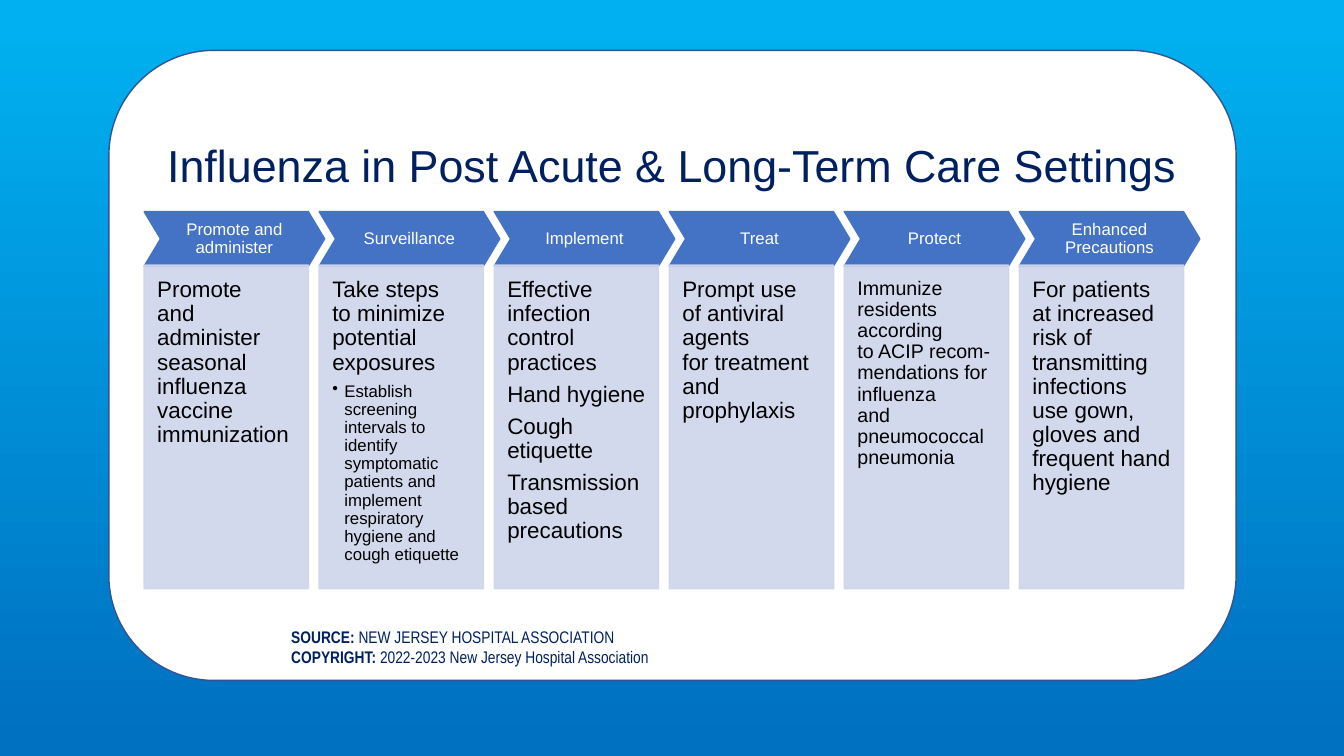
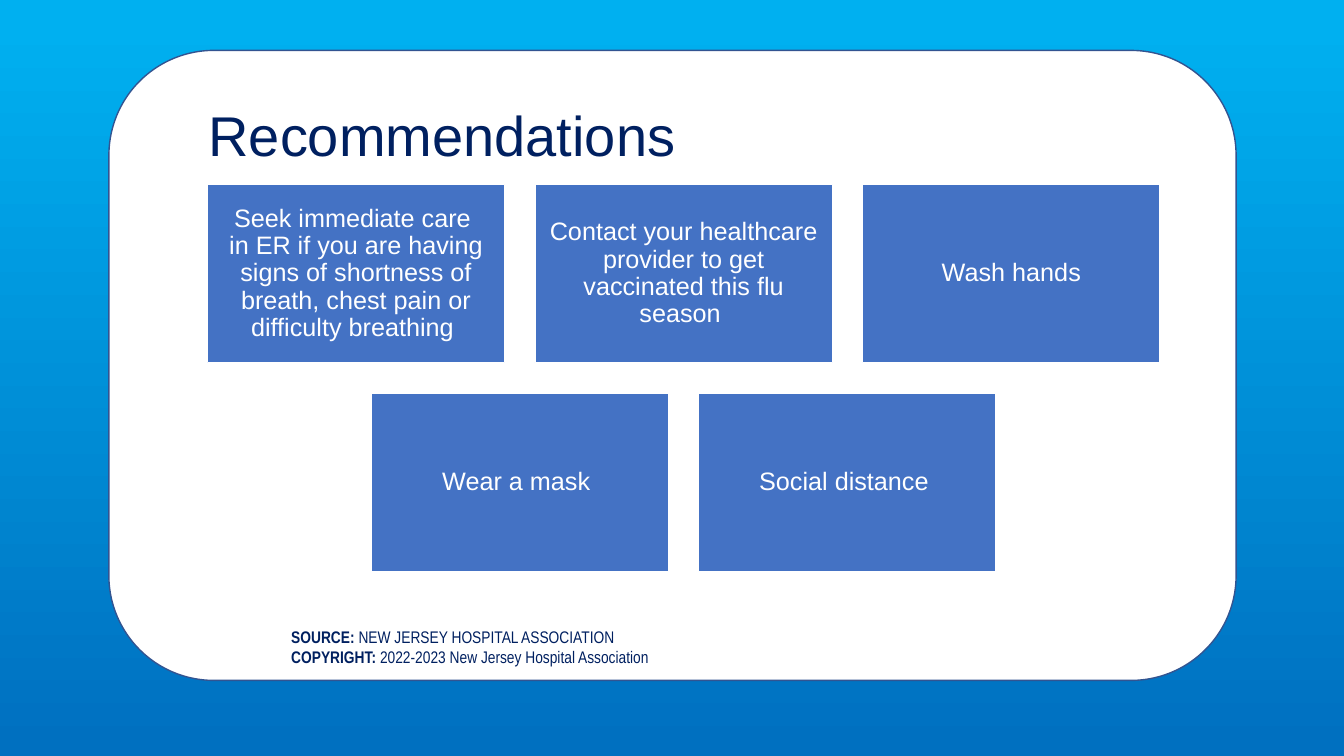
from lxml.etree import SubElement
from pptx import Presentation
from pptx.dml.color import RGBColor
from pptx.enum.shapes import MSO_SHAPE
from pptx.enum.text import MSO_ANCHOR, MSO_AUTO_SIZE, PP_ALIGN
from pptx.oxml.ns import qn
from pptx.util import Inches, Pt

RECT, ROUND, ARROW = MSO_SHAPE.RECTANGLE, MSO_SHAPE.ROUNDED_RECTANGLE, MSO_SHAPE.CHEVRON
LEFT, MID = PP_ALIGN.LEFT, PP_ALIGN.CENTER
TOP, HALF = MSO_ANCHOR.TOP, MSO_ANCHOR.MIDDLE
GROW = MSO_AUTO_SIZE.SHAPE_TO_FIT_TEXT

HUES = {
    "sky": "00B0F0", "sea": "0070C0", "white": "FFFFFF", "edge": "325491",
    "navy": "002060", "blue": "4472C4", "pale": "CFD5EA", "black": "000000",
}

STEPS = [
    ("Promote and administer", 16,
     ["Promote \nand administer seasonal influenza vaccine immunization"], None),
    ("Surveillance", 16,
     ["Take steps \nto minimize potential exposures"],
     "Establish screening intervals to identify symptomatic patients "
     "and implement respiratory hygiene and cough etiquette"),
    ("Implement", 16,
     ["Effective infection control practices", "Hand hygiene",
      "Cough etiquette", "Transmission based precautions"], None),
    ("Treat", 16,
     ["Prompt use of antiviral agents \nfor treatment and prophylaxis"], None),
    ("Protect", 14,
     ["Immunize residents according \nto ACIP recom-mendations for influenza "
      "\nand pneumococcal pneumonia"], None),
    ("Enhanced Precautions", 16,
     ["For patients at increased risk of transmitting infections "
      "\nuse gown, gloves and frequent hand hygiene"], None),
]

TIPS = [
    ["Seek immediate care \nin ER if you are having signs of shortness of breath, "
     "chest pain or difficulty breathing ",
     "Contact your healthcare provider to get vaccinated this flu season ",
     "Wash hands"],
    ["Wear a mask ", "Social distance "],
]


def tint(name):
    return RGBColor.from_string(HUES[name])


def say(frame, text, size=12, ink="white", face="Arial", bold=False, align=LEFT,
        line=0.9, after=0.0, dot=False, more=False):
    para = frame.paragraphs[-1]
    if para.runs and not more:
        para = frame.add_paragraph()
    if dot:
        props = para._p.get_or_add_pPr()
        props.set("marL", str(Inches(0.12)))
        props.set("indent", str(-Inches(0.12)))
        SubElement(props, qn("a:buChar")).set("char", "•")
    para.alignment = align
    para.line_spacing = line
    para.space_after = Pt(size * after)
    for i, part in enumerate(text.split("\n")):
        if i:
            para.add_line_break()
            brk = para._p.findall(qn("a:br"))[-1]
            SubElement(brk, qn("a:rPr")).set("sz", str(size * 100))
        run = para.add_run()
        run.text = part
        font = run.font
        font.size, font.name, font.bold = Pt(size), face, bold
        font.color.rgb = tint(ink)


class Deck:
    def __init__(self):
        self.prs = Presentation()
        self.prs.slide_width = Inches(13.33)
        self.prs.slide_height = Inches(7.5)
        self.slide = None
        fill = self.prs.slide_master.background.fill
        fill.gradient()
        fill.gradient_angle = 270
        for stop, (spot, name) in zip(fill.gradient_stops, [(0.03, "sky"), (0.99, "sea")]):
            stop.position = spot
            stop.color.rgb = tint(name)

    def page(self, title, size, left, top, width, height):
        self.slide = self.prs.slides.add_slide(self.prs.slide_layouts[6])
        self.shape(ROUND, 1.08, 0.5, 11.18, 6.25, "white", "edge")
        self.foot()
        say(self.text(left, top, width, height), title, size=size, ink="navy")

    def foot(self):
        frame = self.text(2.79, 6.17, 4.64, 0.5)
        frame.auto_size = GROW
        style = {"ink": "navy", "face": "Arial Narrow", "line": 1.0}
        for head, body in [("SOURCE: ", "NEW JERSEY HOSPITAL ASSOCIATION"),
                           ("COPYRIGHT: ", "2022-2023 New Jersey Hospital Association")]:
            say(frame, head, bold=True, **style)
            say(frame, body, more=True, **style)

    def text(self, left, top, width, height):
        box = self.slide.shapes.add_textbox(
            Inches(left), Inches(top), Inches(width), Inches(height))
        box.text_frame.word_wrap = True
        return box.text_frame

    def shape(self, kind, left, top, width, height, fill, edge, alpha=None,
              pad=(0.07, 0.07, 0.07, 0.07), anchor=HALF, bend=None):
        item = self.slide.shapes.add_shape(
            kind, Inches(left), Inches(top), Inches(width), Inches(height))
        item.shadow.inherit = False
        item.fill.solid()
        item.fill.fore_color.rgb = tint(fill)
        item.line.color.rgb = tint(edge)
        item.line.width = Pt(1)
        if alpha:
            for color in list(item._element.iter(qn("a:srgbClr"))):
                SubElement(color, qn("a:alpha")).set("val", str(alpha * 1000))
        if bend:
            item.adjustments[0] = bend
        frame = item.text_frame
        frame.word_wrap = True
        frame.vertical_anchor = anchor
        frame.margin_left, frame.margin_top, frame.margin_right, frame.margin_bottom = map(
            Inches, pad)
        return frame

    def step(self, left, head, size, lines, note):
        frame = self.shape(ARROW, left, 2.1, 1.79, 0.54, "blue", "blue", bend=0.3)
        say(frame, head, align=MID, after=0.35)
        frame = self.shape(RECT, left, 2.63, 1.63, 3.21, "pale", "pale", alpha=90,
                           pad=(0.13, 0.13, 0.13, 0.26), anchor=TOP)
        for text in lines:
            say(frame, text, size=size, ink="black", after=0.35)
        if note:
            say(frame, note, ink="black", after=0.15, dot=True)

    def tile(self, left, top, width, height, text):
        frame = self.shape(RECT, left, top, width, height, "blue", "white")
        say(frame, text, size=18, align=MID, after=0.35)


def main():
    deck = Deck()
    deck.page("Influenza in Post Acute & Long-Term Care Settings", 32, 1.56, 1.38, 11.6, 1.19)
    pitch = 8.68 / (len(STEPS) - 1)
    for i, step in enumerate(STEPS):
        deck.step(1.43 + i * pitch, *step)

    deck.page("Recommendations", 40, 1.97, 1.02, 9.4, 0.8)
    width, height, gap, center = 2.95, 1.77, 0.3, 6.78
    for j, row in enumerate(TIPS):
        left = center - (len(row) * (width + gap) - gap) / 2
        for i, text in enumerate(row):
            deck.tile(left + i * (width + gap), 1.83 + j * (height + gap), width, height, text)
    deck.prs.save("out.pptx")


if __name__ == "__main__":
    main()
